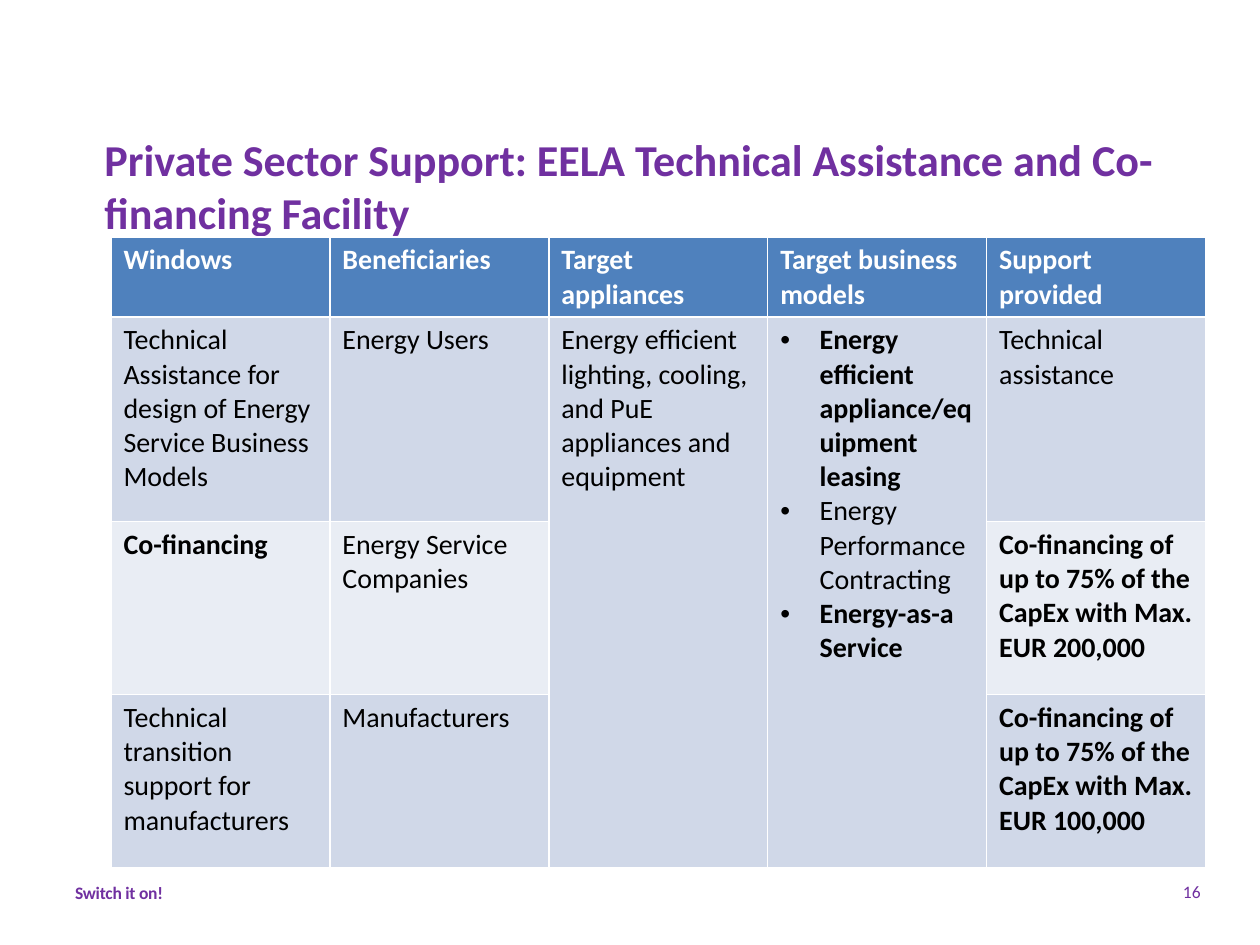
from lxml.etree import SubElement
from pptx import Presentation
from pptx.dml.color import RGBColor
from pptx.enum.text import PP_ALIGN
from pptx.oxml.ns import qn
from pptx.util import Pt

TITLE = ("Private Sector Support: EELA Technical Assistance "
         "and Co-financing Facility")
HEAD = ["Windows", "Beneficiaries", "Target appliances",
        "Target business models", "Support provided"]
# Each body cell is a list of (text, bold); None continues the cell above.
BODY = [
    [[("Technical Assistance for design of Energy Service Business Models", False)],
     [("Energy Users", False)],
     [("Energy efficient lighting, cooling, and PuE appliances and equipment", False)],
     [("Energy efficient appliance/equipment leasing", True),
      ("Energy Performance Contracting", False),
      ("Energy-as-a Service", True)],
     [("Technical assistance", False)]],
    [[("Co-financing", True)],
     [("Energy Service Companies", False)],
     None, None,
     [("Co-financing of up to 75% of the CapEx with Max. EUR 200,000", True)]],
    [[("Technical transition support for manufacturers", False)],
     [("Manufacturers", False)],
     None, None,
     [("Co-financing of up to 75% of the CapEx with Max. EUR 100,000", True)]],
]
ROWS = [44, 117, 98.8, 98.8]
COL = 125.1
PURPLE, BLUE, WHITE, BLACK = "7030A0", "4F81BD", "FFFFFF", "000000"
BANDS = ["D0D8E8", "E9EDF4"]


def color(code):
    return RGBColor.from_string(code)


def write(para, text, size, code, bold=False):
    run = para.add_run()
    run.text = text
    look = {"name": "Calibri", "size": Pt(size), "bold": bold}
    for key, value in look.items():
        setattr(run.font, key, value)
    run.font.color.rgb = color(code)
    return run


def bullet(para):
    props = para._p.get_or_add_pPr()
    props.set("marL", str(Pt(22.5)))
    props.set("indent", str(-Pt(22.5)))
    SubElement(props, qn("a:buFont")).set("typeface", "Arial")
    SubElement(props, qn("a:buChar")).set("char", "•")


def add_box(slide, place, inset=None):
    """Add a wrapping text box and return its frame and first paragraph."""
    frame = slide.shapes.add_textbox(*map(Pt, place)).text_frame
    frame.word_wrap = True
    if inset is not None:
        for side in ("left", "top", "right", "bottom"):
            setattr(frame, f"margin_{side}", Pt(inset))
    return frame, frame.paragraphs[0]


def fill_cell(cell, items, back, code):
    cell.fill.solid()
    cell.fill.fore_color.rgb = color(back)
    frame = cell.text_frame
    for i, (text, bold) in enumerate(items):
        para = frame.add_paragraph() if i else frame.paragraphs[0]
        if len(items) > 1:
            bullet(para)
        write(para, text, 16, code, bold)


def add_grid(slide):
    frame = slide.shapes.add_table(
        len(ROWS), len(HEAD), Pt(63.4), Pt(135.4),
        Pt(COL * len(HEAD)), Pt(sum(ROWS)))
    table = frame.table
    for col in table.columns:
        col.width = Pt(COL)
    for row, high in zip(table.rows, ROWS):
        row.height = Pt(high)
    for c, text in enumerate(HEAD):
        fill_cell(table.cell(0, c), [(text, True)], BLUE, WHITE)
    for r, line in enumerate(BODY, 1):
        for c, items in enumerate(line):
            if items:
                fill_cell(table.cell(r, c), items, BANDS[(r - 1) % 2], BLACK)
    for c, items in enumerate(BODY[-1]):
        if items is None:
            table.cell(1, c).merge(table.cell(len(BODY), c))


def main():
    deck = Presentation()
    deck.slide_width, deck.slide_height = Pt(720), Pt(540)
    slide = deck.slides.add_slide(deck.slide_layouts[6])

    frame, para = add_box(slide, (42, 504, 438, 28.8), 0)
    frame.margin_left = Pt(0.9)
    run = write(para, "Switch it on!", 10, PURPLE, True)
    run.font._element.set("spc", "-10")

    frame, para = add_box(slide, (504, 504, 182, 28.8), 0)
    para.alignment = PP_ALIGN.RIGHT
    para.line_spacing = Pt(11.4)
    write(para, "16", 10, PURPLE)

    frame, para = add_box(slide, (52.6, 72, 646.6, 62.6))
    write(para, TITLE, 25.2, PURPLE, True)

    add_grid(slide)
    deck.save("out.pptx")


if __name__ == "__main__":
    main()
